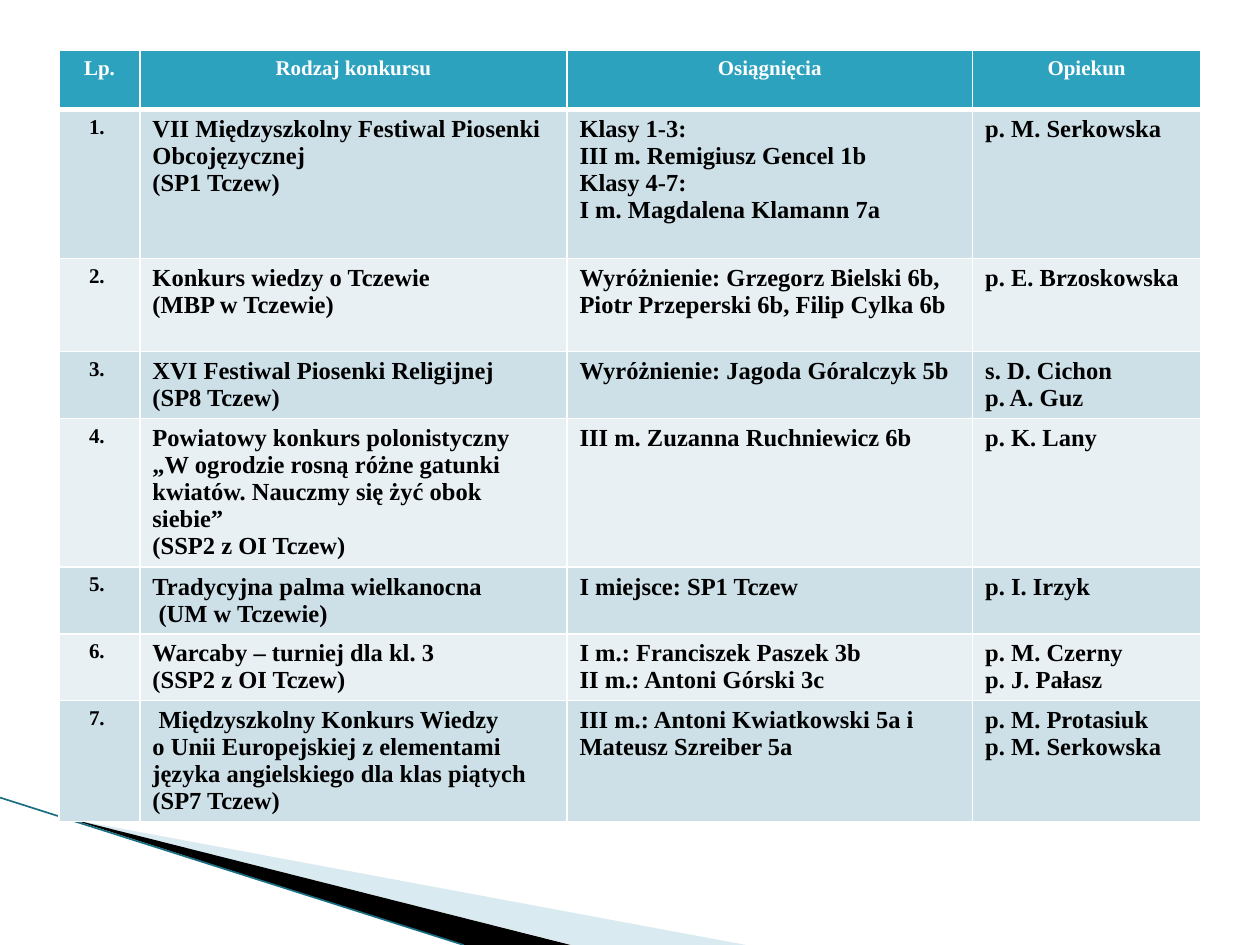
"""Build a slide with a table of school competition results."""
from lxml import etree
from pptx import Presentation
from pptx.dml.color import RGBColor
from pptx.enum.shapes import MSO_CONNECTOR
from pptx.enum.text import PP_ALIGN
from pptx.oxml.ns import qn
from pptx.util import Inches, Pt

STRAIGHT = MSO_CONNECTOR.STRAIGHT
LEFT, CENTER = PP_ALIGN.LEFT, PP_ALIGN.CENTER
FONT = "Times New Roman"
COLORS = {
    "white": "FFFFFF", "black": "000000", "header": "2DA2BF",
    "odd": "CDE0E8", "even": "E8F0F4", "wedge": "A0CBDC", "line": "1A6E82",
}
COL_WIDTHS = [0.64, 3.39, 3.22, 1.81]
ROW_HEIGHTS = [0.47, 1.18, 0.74, 0.53, 1.18, 0.53, 0.53, 0.96]
HEADERS = ["Lp.", "Rodzaj konkursu", "Osiągnięcia", "Opiekun"]
CONTESTS = [
    ("VII Międzyszkolny Festiwal Piosenki Obcojęzycznej\n(SP1 Tczew)",
     "Klasy 1-3:\nIII m. Remigiusz Gencel 1b\nKlasy 4-7:\nI m. Magdalena Klamann 7a",
     "p. M. Serkowska"),
    ("Konkurs wiedzy o Tczewie\n(MBP w Tczewie)",
     "Wyróżnienie: Grzegorz Bielski 6b,\nPiotr Przeperski 6b, Filip Cylka 6b",
     "p. E. Brzoskowska"),
    ("XVI Festiwal Piosenki Religijnej\n(SP8 Tczew)",
     "Wyróżnienie: Jagoda Góralczyk 5b",
     "s. D. Cichon\np. A. Guz"),
    ("Powiatowy konkurs polonistyczny\n„W ogrodzie rosną różne gatunki kwiatów. "
     "Nauczmy się żyć obok siebie”\n(SSP2 z OI Tczew)",
     "III m. Zuzanna Ruchniewicz 6b",
     "p. K. Lany"),
    ("Tradycyjna palma wielkanocna\n (UM w Tczewie)",
     "I miejsce: SP1 Tczew",
     "p. I. Irzyk"),
    ("Warcaby – turniej dla kl. 3\n(SSP2 z OI Tczew)",
     "I m.: Franciszek Paszek 3b\nII m.: Antoni Górski 3c",
     "p. M. Czerny\np. J. Pałasz"),
    (" Międzyszkolny Konkurs Wiedzy\no Unii Europejskiej z elementami języka "
     "angielskiego dla klas piątych\n(SP7 Tczew)",
     "III m.: Antoni Kwiatkowski 5a i Mateusz Szreiber 5a",
     "p. M. Protasiuk\np. M. Serkowska"),
]


def rgb(name):
    return RGBColor.from_string(COLORS[name])


def write_text(tf, text, size=14, color="black", align=LEFT):
    for i, line in enumerate(text.split("\n")):
        p = tf.paragraphs[0] if i == 0 else tf.add_paragraph()
        p.alignment = align
        r = p.add_run()
        r.text = line
        r.font.name = FONT
        r.font.size = Pt(size)
        r.font.bold = True
        r.font.color.rgb = rgb(color)


def add_wedge(slide, points, color, alpha=None):
    corners = [(Inches(x), Inches(y)) for x, y in points]
    builder = slide.shapes.build_freeform(*corners[0])
    builder.add_line_segments(corners[1:], close=True)
    sp = builder.convert_to_shape()
    sp.shadow.inherit = False
    sp.fill.solid()
    sp.fill.fore_color.rgb = rgb(color)
    sp.line.fill.background()
    if alpha is not None:
        clr = sp._element.spPr.find(qn("a:solidFill"))[0]
        etree.SubElement(clr, qn("a:alpha"), val=str(alpha * 1000))


def add_line(slide, start, end, color, width):
    line = slide.shapes.add_connector(STRAIGHT, *map(Inches, start + end))
    line.line.color.rgb = rgb(color)
    line.line.width = Pt(width)
    etree.SubElement(line._element.spPr, qn("a:effectLst"))


def set_borders(cell, top, bottom):
    tcPr = cell._tc.get_or_add_tcPr()
    for side, width in (("L", 1), ("R", 1), ("T", top), ("B", bottom)):
        ln = etree.SubElement(tcPr, qn(f"a:ln{side}"), w=str(Pt(width)))
        fill = etree.SubElement(ln, qn("a:solidFill"))
        etree.SubElement(fill, qn("a:srgbClr"), val=COLORS["white"])


def fill_cell(cell, text, fill, top=1, bottom=1, **text_format):
    set_borders(cell, top, bottom)
    cell.fill.solid()
    cell.fill.fore_color.rgb = rgb(fill)
    write_text(cell.text_frame, text, **text_format)


def add_results(slide):
    frame = slide.shapes.add_table(
        len(ROW_HEIGHTS), len(COL_WIDTHS), Inches(0.47), Inches(0.4),
        Inches(sum(COL_WIDTHS)), Inches(sum(ROW_HEIGHTS)))
    table = frame.table
    for col, width in zip(table.columns, COL_WIDTHS):
        col.width = Inches(width)
    for row, height in zip(table.rows, ROW_HEIGHTS):
        row.height = Inches(height)
    for j, text in enumerate(HEADERS):
        fill_cell(table.cell(0, j), text, "header", bottom=3,
                  size=12, color="white", align=CENTER)
    for i, contest in enumerate(CONTESTS, start=1):
        fill = "odd" if i % 2 else "even"
        top = 3 if i == 1 else 1
        fill_cell(table.cell(i, 0), f"{i}. ", fill, top=top, size=12, align=CENTER)
        for j, text in enumerate(contest, start=1):
            fill_cell(table.cell(i, j), text, fill, top=top)


def main():
    prs = Presentation()
    prs.slide_width, prs.slide_height = Inches(10), Inches(7.5)
    slide = prs.slides.add_slide(prs.slide_layouts[6])
    add_wedge(slide, [(0.55, 6.5), (5.92, 7.5), (4.54, 7.5)], "wedge", alpha=40)
    add_wedge(slide, [(0.53, 6.49), (4.53, 7.5), (3.68, 7.5)], "black")
    add_line(slide, (0, 6.33), (3.68, 7.5), "line", 0.95)
    add_results(slide)
    prs.save("out.pptx")


if __name__ == "__main__":
    main()
